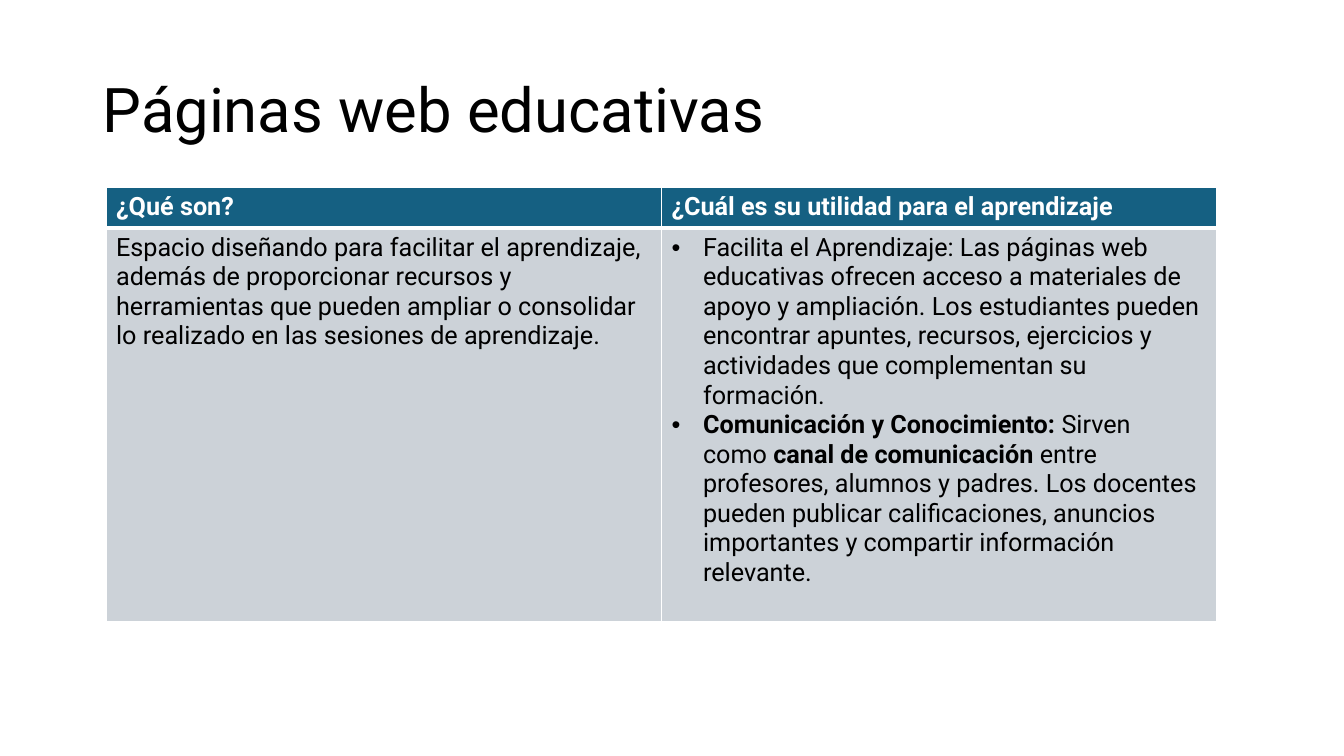
from lxml import etree
from pptx import Presentation
from pptx import util as u
from pptx.dml.color import RGBColor
from pptx.enum import text
from pptx.oxml import ns

BLACK = RGBColor(0x00, 0x00, 0x00)
WHITE = RGBColor(0xFF, 0xFF, 0xFF)
TEAL = RGBColor(0x15, 0x60, 0x82)
GREY = RGBColor(0xCC, 0xD2, 0xD8)
NBSP = chr(160)

HEADINGS = ["¿Qué son?", "¿Cuál es su utilidad para el aprendizaje"]
DEFINITION = (
    "Espacio diseñando para facilitar el aprendizaje, además de proporcionar "
    "recursos y herramientas que pueden ampliar o consolidar lo realizado en "
    "las sesiones de aprendizaje."
)
LEARNING = (
    "Facilita el Aprendizaje: Las páginas web educativas ofrecen acceso a "
    "materiales de apoyo y ampliación. Los estudiantes pueden encontrar apuntes, "
    "recursos, ejercicios y actividades que complementan su formación."
)
COMMUNICATION = [
    ("Comunicación y Conocimiento:", True),
    (f"{NBSP}Sirven como{NBSP}", False),
    ("canal de comunicación", True),
    (f"{NBSP}entre profesores, alumnos y padres. Los docentes pueden publicar "
     "calificaciones, anuncios importantes y compartir información relevante.", False),
]


def px(length):
    return u.Emu(length * 9525)


def apply(target, values):
    for name, value in values.items():
        setattr(target, name, value)


class SlideBuilder:
    font = "Roboto"
    bullet_indent = 30

    def __init__(self, deck):
        self.page = deck.slides.add_slide(deck.slide_layouts[5])

    def add_spans(self, para, spans, size, color):
        for words, bold in spans:
            span = para.add_run()
            span.text = words
            apply(span.font, {"name": self.font, "size": u.Pt(size), "bold": bold})
            span.font.color.rgb = color

    def title(self, words, left, top, width, height):
        box = self.page.shapes.title
        apply(box, {"left": px(left), "top": px(top), "width": px(width), "height": px(height)})
        box.text_frame.vertical_anchor = text.MSO_ANCHOR.MIDDLE
        para = box.text_frame.paragraphs[0]
        apply(para, {"alignment": text.PP_ALIGN.LEFT, "line_spacing": 0.9})
        self.add_spans(para, [(words, False)], 44, BLACK)

    def table(self, left, top, column_widths, row_heights):
        frame = self.page.shapes.add_table(
            len(row_heights), len(column_widths), px(left), px(top),
            px(sum(column_widths)), px(sum(row_heights)))
        grid = frame.table
        grid.horz_banding = False
        for column, width in zip(grid.columns, column_widths):
            column.width = px(width)
        for row, height in zip(grid.rows, row_heights):
            row.height = px(height)
        return grid

    def cell(self, cell, paragraphs, fill, color, borders, bulleted=False):
        self.borders(cell, borders)
        cell.fill.solid()
        cell.fill.fore_color.rgb = fill
        for index, spans in enumerate(paragraphs):
            frame = cell.text_frame
            para = frame.add_paragraph() if index else frame.paragraphs[0]
            if bulleted:
                self.bullet(para)
            self.add_spans(para, spans, 18, color)

    def borders(self, cell, widths):
        properties = cell._tc.get_or_add_tcPr()
        for side, points in zip(("lnL", "lnR", "lnT", "lnB"), widths):
            line = etree.SubElement(properties, ns.qn(f"a:{side}"), w=str(u.Pt(points)))
            paint = etree.SubElement(line, ns.qn("a:solidFill"))
            etree.SubElement(paint, ns.qn("a:srgbClr"), val=str(WHITE))

    def bullet(self, para):
        properties = para._p.get_or_add_pPr()
        indent = px(self.bullet_indent)
        properties.set("marL", str(indent))
        properties.set("indent", str(-indent))
        etree.SubElement(properties, ns.qn("a:buFont"), typeface="Arial")
        etree.SubElement(properties, ns.qn("a:buChar"), char="•")


def main():
    deck = Presentation()
    apply(deck, {"slide_width": px(1280), "slide_height": px(720)})
    slide = SlideBuilder(deck)
    slide.title("Páginas web educativas", 88, 38, 1104, 139)
    grid = slide.table(101, 178, [529, 529], [39, 375])
    for column, heading in enumerate(HEADINGS):
        slide.cell(grid.cell(0, column), [[(heading, True)]], TEAL, WHITE, (1, 1, 1, 3))
    slide.cell(grid.cell(1, 0), [[(DEFINITION, False)]], GREY, BLACK, (1, 1, 3, 1))
    slide.cell(grid.cell(1, 1), [[(LEARNING, False)], COMMUNICATION], GREY, BLACK,
               (1, 1, 3, 1), bulleted=True)
    deck.save("out.pptx")


if __name__ == "__main__":
    main()
